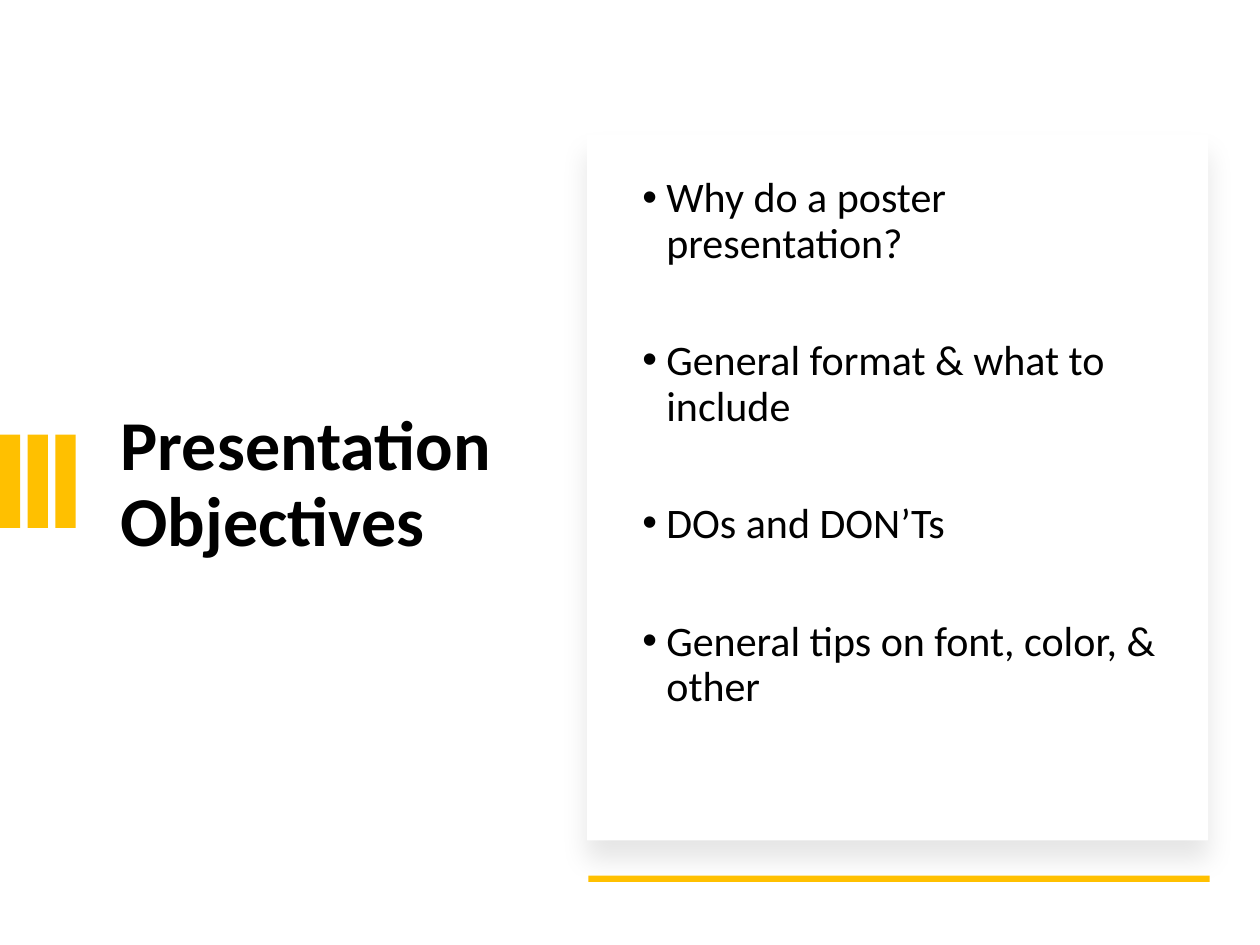
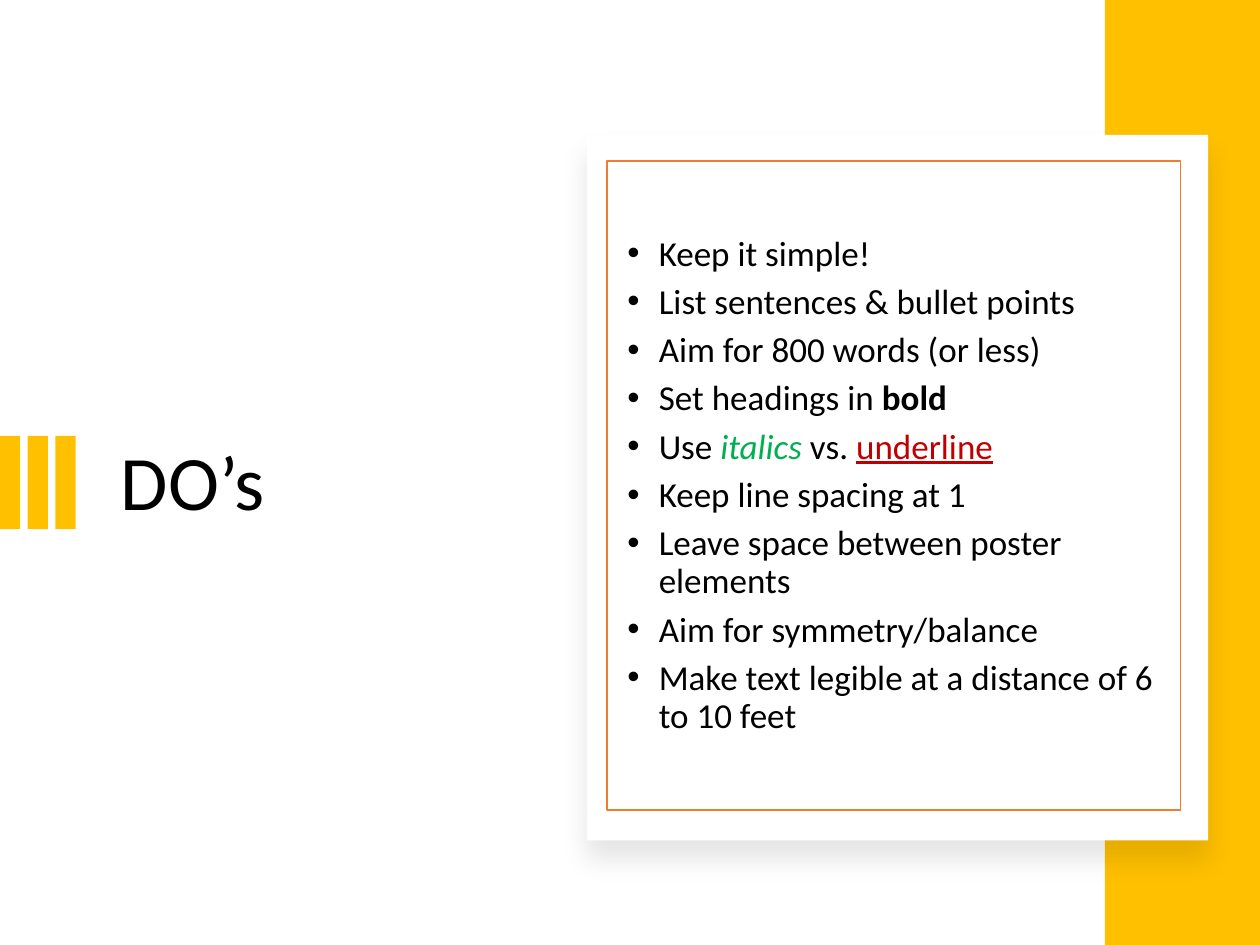
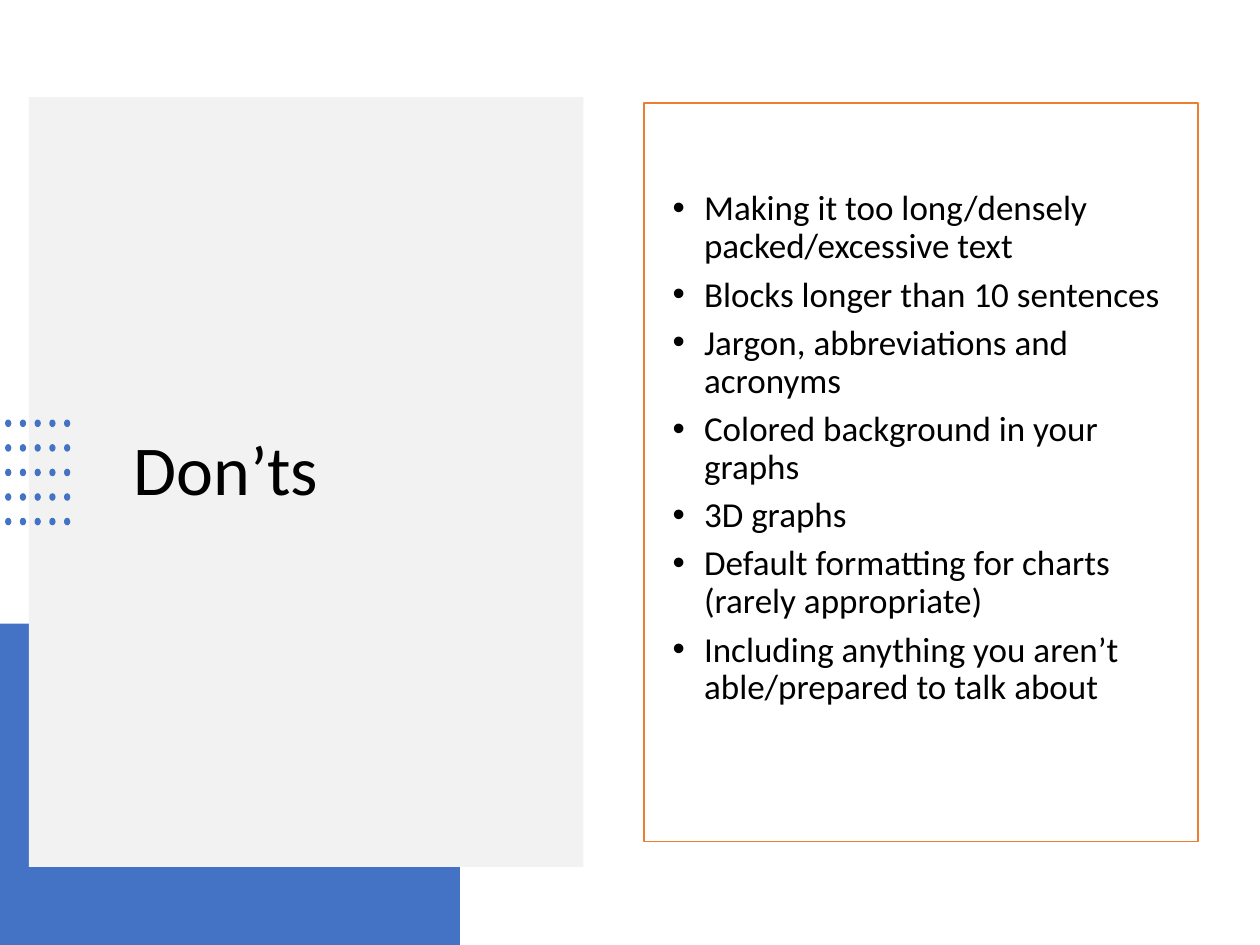
from lxml import etree
from pptx import Presentation
from pptx.dml.color import RGBColor
from pptx.enum.shapes import MSO_SHAPE
from pptx.enum.text import MSO_ANCHOR, PP_ALIGN
from pptx.oxml.ns import qn
from pptx.util import Inches, Pt

RECTANGLE, OVAL = MSO_SHAPE.RECTANGLE, MSO_SHAPE.OVAL
MIDDLE, LEFT = MSO_ANCHOR.MIDDLE, PP_ALIGN.LEFT

COLUMNS, ROWS = 100, 75
FONT = "Calibri"
BLACK, WHITE, GREY = "000000", "FFFFFF", "F2F2F2"
GOLD, BLUE, ORANGE = "FFC000", "4472C4", "ED7D31"
GREEN, RED = "00B050", "C00000"

CARD = (46.6, 10.7, 49.3, 56)

OBJECTIVES = [
    "Why do a poster presentation?",
    "General format & what to include",
    "DOs and DON’Ts",
    "General tips on font, color, & other",
]
# A point is plain text, or a list of (text, style) spans.
DOS = [
    "Keep it simple!",
    "List sentences & bullet points",
    "Aim for 800 words (or less)",
    [("Set headings in ", {}), ("bold", {"bold": True})],
    [("Use", {}), (" italics ", {"italic": True, "color": GREEN}),
     ("vs. ", {}), ("underline", {"underline": True, "color": RED})],
    "Keep line spacing at 1",
    "Leave space between poster elements",
    "Aim for symmetry/balance",
    "Make text legible at a distance of 6 to 10 feet",
]
DONTS = [
    "Making it too long/densely packed/excessive text",
    "Blocks longer than 10 sentences",
    "Jargon, abbreviations and acronyms",
    "Colored background in your graphs",
    "3D graphs",
    "Default formatting for charts (rarely appropriate)",
    "Including anything you aren’t able/prepared to talk about",
]


def rgb(color):
    return RGBColor.from_string(color)


class Deck:
    """Holds the shared style and the slide being filled."""

    def __init__(self):
        self.deck = Presentation()
        self.deck.slide_width, self.deck.slide_height = Inches(10), Inches(7.5)
        self.column = self.deck.slide_width / COLUMNS
        self.row = self.deck.slide_height / ROWS
        self.page = None

    def new_page(self):
        self.page = self.deck.slides.add_slide(self.deck.slide_layouts[6])

    def place(self, left, top, width, height):
        """Turn columns and rows into slide lengths."""
        return (round(left * self.column), round(top * self.row),
                round(width * self.column), round(height * self.row))

    def shape(self, area, fill, line=None, kind=RECTANGLE, parent=None):
        shapes = (parent or self.page).shapes
        shape = shapes.add_shape(kind, *self.place(*area))
        shape.shadow.inherit = False
        shape.fill.solid()
        shape.fill.fore_color.rgb = rgb(fill)
        if line:
            shape.line.color.rgb = rgb(line)
            shape.line.width = Pt(1)
        else:
            shape.line.fill.background()
        return shape

    def card(self):
        """Add the white panel with a soft shadow below it."""
        card = self.shape(CARD, WHITE)
        effects = card._element.spPr.find(qn("a:effectLst"))
        shadow = etree.SubElement(
            effects, qn("a:outerShdw"), blurRad=str(Pt(15)), dist=str(Pt(11)),
            dir="5400000", algn="t", rotWithShape="0")
        color = etree.SubElement(shadow, qn("a:srgbClr"), val=BLACK)
        etree.SubElement(color, qn("a:alpha"), val="10000")

    def bars(self, top):
        group = self.page.shapes.add_group_shape()
        for number in range(3):
            self.shape((2.2 * number, top, 1.6, 7.4), GOLD, parent=group)

    def dots(self, left, top, count=5):
        group = self.page.shapes.add_group_shape()
        for across in range(count):
            for down in range(count):
                area = (left + 1.17 * across, top + 1.95 * down, 0.5, 0.6)
                self.shape(area, BLUE, kind=OVAL, parent=group)

    def text_box(self, area):
        return self.page.shapes.add_textbox(*self.place(*area))

    def format_span(self, span, size, color=BLACK, bold=None, italic=None,
                    underline=None):
        font = span.font
        font.name, font.size = FONT, Pt(size)
        font.color.rgb = rgb(color)
        font.bold, font.italic, font.underline = bold, italic, underline

    def title(self, text, area, size=40, bold=None, indent=0):
        frame = self.text_box(area).text_frame
        frame.word_wrap = True
        frame.vertical_anchor = MIDDLE
        frame.margin_left = Inches(0.1 + indent)
        frame.text = text
        para = frame.paragraphs[0]
        para.line_spacing = 0.9
        self.format_span(para.runs[0], size, bold=bold)

    def bullets(self, box, points, size=20, margin=0.31, hanging=0.25,
                before=0, after=6, gap=0):
        """Fill a box with bullets; gap is extra space between points."""
        frame = box.text_frame
        frame.word_wrap = True
        frame.vertical_anchor = MIDDLE
        for number, point in enumerate(points):
            para = frame.add_paragraph() if number else frame.paragraphs[0]
            para.alignment = LEFT
            para.line_spacing = 0.9
            para.space_before = Pt(before + (gap if number else 0))
            para.space_after = Pt(after)
            spans = [(point, {})] if isinstance(point, str) else point
            for text, style in spans:
                span = para.add_run()
                span.text = text
                self.format_span(span, size, **style)
            properties = para._p.get_or_add_pPr()
            properties.set("marL", str(Inches(margin)))
            properties.set("indent", str(-Inches(hanging)))
            etree.SubElement(properties, qn("a:buFont"), typeface="Arial")
            etree.SubElement(properties, qn("a:buChar"), char="•")
        return frame

    def save(self):
        self.deck.save("out.pptx")


def objectives_page(deck):
    deck.new_page()
    deck.title("Presentation Objectives", (8.6, 15, 38.1, 47.1), bold=True)
    deck.bars(34.5)
    deck.card()
    deck.bullets(deck.text_box((50, 8.3, 42.9, 53.8)), OBJECTIVES, size=24,
                 margin=0.19, hanging=0.19, before=7.5, after=0, gap=33.8)
    deck.shape((46.7, 69.5, 49.3, 0.5), GOLD)


def dos_page(deck):
    deck.new_page()
    deck.title("DO’s", (8.6, 14.6, 31.9, 47.9), size=44)
    deck.bars(34.6)
    deck.shape((87.7, 0, 12.3, ROWS), GOLD)
    deck.card()
    panel = deck.shape((48.2, 12.8, 45.5, 51.5), WHITE, line=ORANGE)
    deck.bullets(panel, DOS)


def donts_page(deck):
    deck.new_page()
    deck.shape((0, 49.5, 36.5, 25.5), BLUE)
    deck.shape((2.3, 7.7, 44, 61.1), GREY)
    deck.title("Don’ts", (8.3, 14.7, 34.4, 45.6), indent=0.13)
    deck.dots(0.4, 33.3)
    panel = deck.shape((51.1, 8.2, 44, 58.6), WHITE, line=ORANGE)
    frame = deck.bullets(panel, DONTS, margin=0.38)
    frame.margin_bottom = Inches(0.42)


def main():
    deck = Deck()
    objectives_page(deck)
    dos_page(deck)
    donts_page(deck)
    deck.save()


if __name__ == "__main__":
    main()
